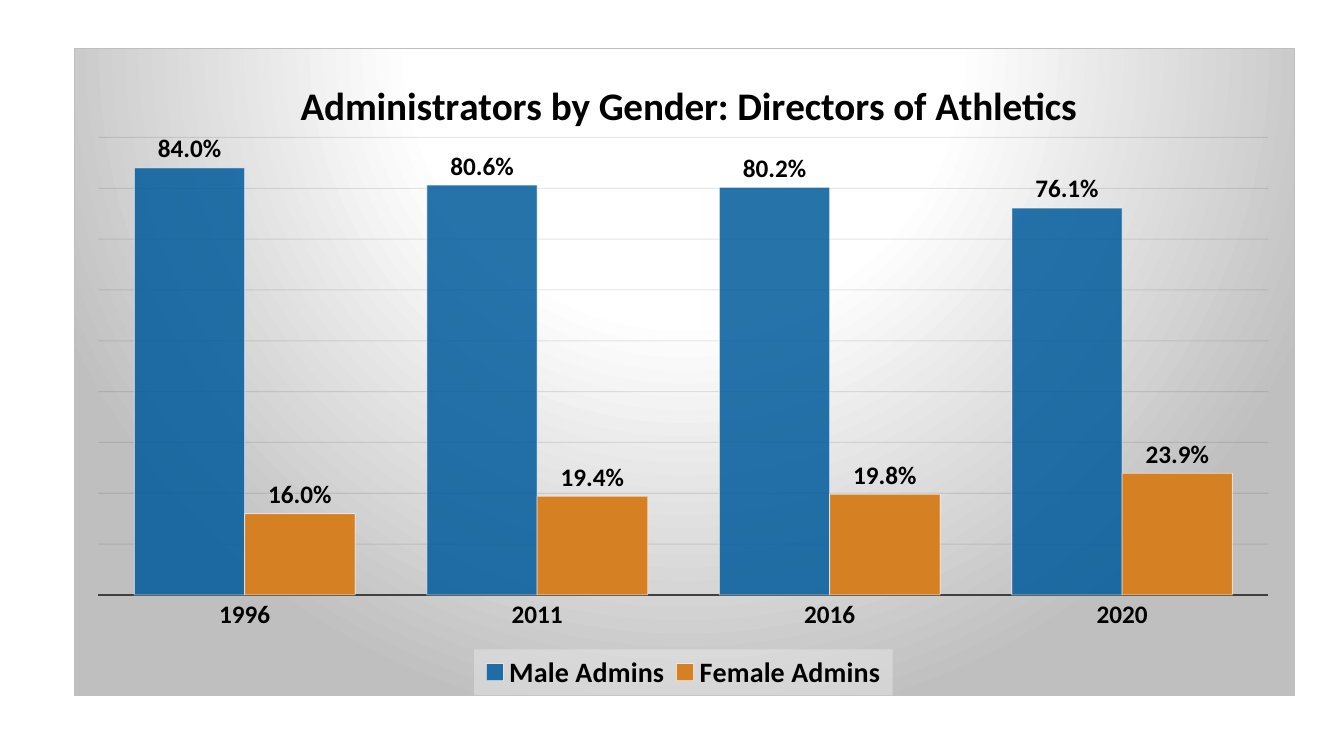
import pptx
import pptx.chart.data
import pptx.dml.color
import pptx.enum.chart
import pptx.oxml
import pptx.oxml.ns
import pptx.util

Inches = pptx.util.Inches
Pt = pptx.util.Pt
qn = pptx.oxml.ns.qn
NS = pptx.oxml.ns.nsdecls("c", "a")

YEARS = ["1996", "2011", "2016", "2020"]
MALE = [0.84, 0.806, 0.802, 0.761]
FEMALE = [0.16, 0.194, 0.198, 0.239]
BACK = """<c:spPr %s><a:gradFill><a:gsLst>
<a:gs pos="0"><a:srgbClr val="FFFFFF"/></a:gs>
<a:gs pos="39000"><a:srgbClr val="FFFFFF"/></a:gs>
<a:gs pos="100000"><a:srgbClr val="BFBFBF"/></a:gs></a:gsLst>
<a:path path="circle">
<a:fillToRect l="50000" t="-80000" r="50000" b="180000"/></a:path></a:gradFill>
<a:ln w="9525"><a:solidFill><a:srgbClr val="BFBFBF"/></a:solidFill></a:ln>
</c:spPr>""" % NS
PALE = """<c:spPr %s><a:solidFill><a:srgbClr val="F2F2F2">
<a:alpha val="39000"/></a:srgbClr></a:solidFill></c:spPr>""" % NS


def tint(code):
    return pptx.dml.color.RGBColor.from_string(code)


def paint(fill, code, alpha=100):
    """Fill with a solid colour at an opacity in percent."""
    fill.solid()
    fill.fore_color.rgb = tint(code)
    if alpha < 100:
        node = fill._xPr.find(".//" + qn("a:srgbClr"))
        node.append(pptx.oxml.parse_xml('<a:alpha %s val="%d"/>' % (NS, alpha * 1000)))


def place(host, index, **spots):
    """Give a chart part a manual layout, in fractions of the chart."""
    for old in host.findall(qn("c:layout")):
        host.remove(old)
    modes = "".join('<c:%sMode val="edge"/>' % key for key in "xy")
    sizes = "".join('<c:%s val="%s"/>' % pair for pair in spots.items())
    inner = '<c:layoutTarget val="inner"/>' if host.tag == qn("c:plotArea") else ""
    host.insert(index, pptx.oxml.parse_xml(
        "<c:layout %s><c:manualLayout>%s%s%s</c:manualLayout></c:layout>"
        % (NS, inner, modes, sizes)))


class Deck:
    face = "Calibri"
    ink = "000000"

    def __init__(self):
        self.show = pptx.Presentation()
        self.show.slide_width = Inches(13.33)
        self.show.slide_height = Inches(7.5)
        self.slide = self.show.slides.add_slide(self.show.slide_layouts[6])

    def type(self, font, size, bold=True):
        font.name = self.face
        font.size = Pt(size)
        font.bold = bold
        font.color.rgb = tint(self.ink)

    def line(self, line, code, width, alpha=100):
        line.width = Pt(width)
        paint(line.fill, code, alpha)

    def chart(self, kind, box, cats, rows):
        data = pptx.chart.data.CategoryChartData(number_format="0.0%")
        data.categories = cats
        for name, vals in rows:
            data.add_series(name, vals)
        chart = self.slide.shapes.add_chart(kind, *map(Inches, box), data).chart
        self.type(chart.font, 10, False)
        chart._chartSpace.find(qn("c:chart")).addnext(pptx.oxml.parse_xml(BACK))
        return chart

    def title(self, chart, text):
        frame = chart.chart_title.text_frame
        frame.text = text
        self.type(frame.paragraphs[0].runs[0].font, 28)
        place(chart.chart_title._element, 1, x=0.18, y=0.036)

    def axes(self, chart):
        none = pptx.enum.chart.XL_TICK_MARK.NONE
        years, share = chart.category_axis, chart.value_axis
        years.major_tick_mark = none
        self.type(years.tick_labels.font, 18)
        self.line(years.format.line, "404040", 1.5)
        share.minimum_scale, share.maximum_scale = 0, 0.9
        share.major_unit = 0.1
        share.visible = False
        share.has_major_gridlines = True
        self.line(share.major_gridlines.format.line, "0D0D0D", 0.75, 10)

    def bars(self, chart, looks):
        plot = chart.plots[0]
        plot.gap_width = 65
        plot.overlap = 0
        plot.vary_by_categories = False
        for row, (code, alpha) in zip(plot.series, looks):
            paint(row.format.fill, code, alpha)
            self.line(row.format.line, "FFFFFF", 0.75, 50)
            tags = row.data_labels
            tags.show_value = True
            tags.number_format = "0.0%"
            tags.number_format_is_linked = False
            tags.position = pptx.enum.chart.XL_LABEL_POSITION.OUTSIDE_END
            self.type(tags.font, 18)
        area = chart._chartSpace.find(".//" + qn("c:plotArea"))
        place(area, 0, x=0.02, y=0.137, w=0.959, h=0.707)

    def legend(self, chart):
        chart.has_legend = True
        key = chart.legend
        key.position = pptx.enum.chart.XL_LEGEND_POSITION.BOTTOM
        key.include_in_layout = False
        self.type(key.font, 20)
        node = key._element
        place(node, 1, x=0.328, y=0.928, w=0.343, h=0.071)
        node.find(qn("c:txPr")).addprevious(pptx.oxml.parse_xml(PALE))


def main():
    deck = Deck()
    chart = deck.chart(pptx.enum.chart.XL_CHART_TYPE.COLUMN_CLUSTERED,
                       (0.73, 0.48, 12.11, 6.43), YEARS,
                       [("Male Admins", MALE), ("Female Admins", FEMALE)])
    deck.title(chart, "Administrators by Gender: Directors of Athletics")
    deck.axes(chart)
    deck.bars(chart, [("005B9C", 85), ("D68024", 100)])
    deck.legend(chart)
    deck.show.save("out.pptx")


if __name__ == "__main__":
    main()
